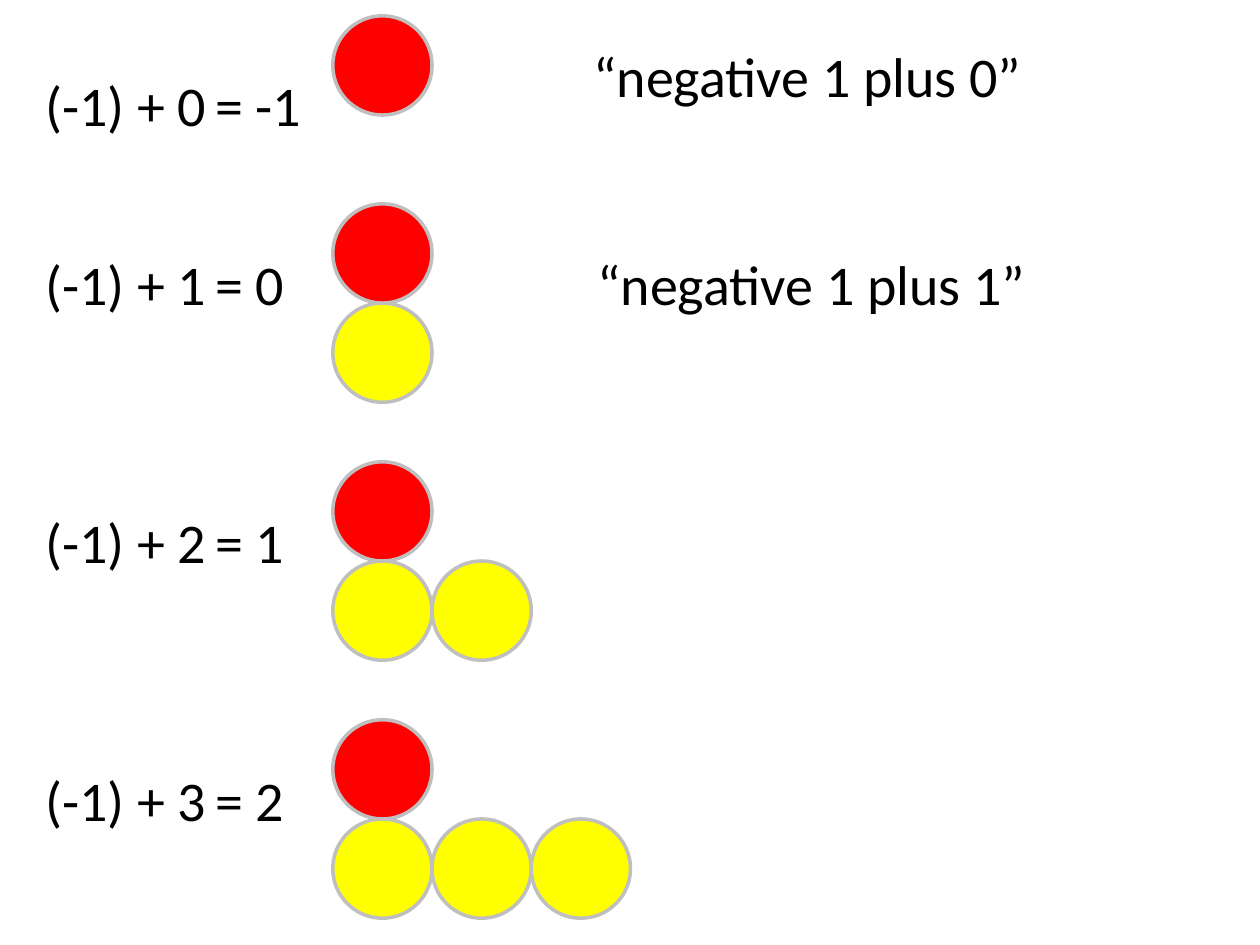
from dataclasses import dataclass

from pptx import Presentation
from pptx.dml.color import RGBColor
from pptx.enum.shapes import MSO_SHAPE
from pptx.enum.text import MSO_AUTO_SIZE
from pptx.util import Cm, Pt


@dataclass(frozen=True)
class Theme:
    font: str = "Calibri"
    text_size: int = 32
    text: str = "000000"
    negative: str = "FF0000"
    positive: str = "FFFF00"
    outline: str = "BFBFBF"
    outline_width: int = 2


THEME = Theme()

# expression, result, number of positive counters
SUMS = [
    ("(-1) + 0", "= -1", 0),
    ("(-1) + 1", "= 0", 1),
    ("(-1) + 2", "= 1", 2),
    ("(-1) + 3", "= 2", 3),
]
# wording, left, top
PHRASES = [
    ("“negative 1 plus 0”", 11.71, 0.71),
    ("“negative 1 plus 1”", 11.79, 4.9),
]

# All lengths are in centimetres.
EXPRESSION_LEFT, RESULT_LEFT = 0.66, 4.09
SUM_WIDTH, PHRASE_WIDTH, TEXT_HEIGHT = 4.19, 15.32, 1.62
COUNTER_LEFT, COUNTER_SIZE = 6.71, 2
FIRST_COUNTER_TOP, FIRST_TEXT_TOP = 0.32, 1.3
PAIRED_COUNTER_TOP, ROW_PITCH, TEXT_DROP = 4.11, 5.2, 0.79


def row_tops(row):
    """Return the tops of the counters and text; the first row stands apart."""
    if row == 0:
        return FIRST_COUNTER_TOP, FIRST_TEXT_TOP
    counter_top = PAIRED_COUNTER_TOP + (row - 1) * ROW_PITCH
    return counter_top, counter_top + TEXT_DROP


def add_text(slide, text, left, top, width):
    box = slide.shapes.add_textbox(Cm(left), Cm(top), Cm(width), Cm(TEXT_HEIGHT))
    frame = box.text_frame
    frame.word_wrap = True
    frame.auto_size = MSO_AUTO_SIZE.SHAPE_TO_FIT_TEXT
    frame.text = text
    font = frame.paragraphs[0].runs[0].font
    font.name = THEME.font
    font.size = Pt(THEME.text_size)
    font.color.rgb = RGBColor.from_string(THEME.text)


def add_counter(shapes, column, top, color):
    left = COUNTER_LEFT + column * COUNTER_SIZE
    counter = shapes.add_shape(
        MSO_SHAPE.OVAL, Cm(left), Cm(top), Cm(COUNTER_SIZE), Cm(COUNTER_SIZE)
    )
    counter.shadow.inherit = False
    counter.fill.solid()
    counter.fill.fore_color.rgb = RGBColor.from_string(color)
    counter.line.color.rgb = RGBColor.from_string(THEME.outline)
    counter.line.width = Pt(THEME.outline_width)


def add_counters(slide, positives, top):
    shapes = slide.shapes.add_group_shape().shapes if positives else slide.shapes
    for column in range(positives):
        add_counter(shapes, column, top + COUNTER_SIZE, THEME.positive)
    add_counter(shapes, 0, top, THEME.negative)


def main():
    presentation = Presentation()
    presentation.slide_width, presentation.slide_height = Cm(25.4), Cm(19.05)
    slide = presentation.slides.add_slide(presentation.slide_layouts[6])

    for row, (expression, result, positives) in enumerate(SUMS):
        counter_top, text_top = row_tops(row)
        add_text(slide, expression, EXPRESSION_LEFT, text_top, SUM_WIDTH)
        add_text(slide, result, RESULT_LEFT, text_top, SUM_WIDTH)
        add_counters(slide, positives, counter_top)

    for phrase, left, top in PHRASES:
        add_text(slide, phrase, left, top, PHRASE_WIDTH)

    presentation.save("out.pptx")


if __name__ == "__main__":
    main()
